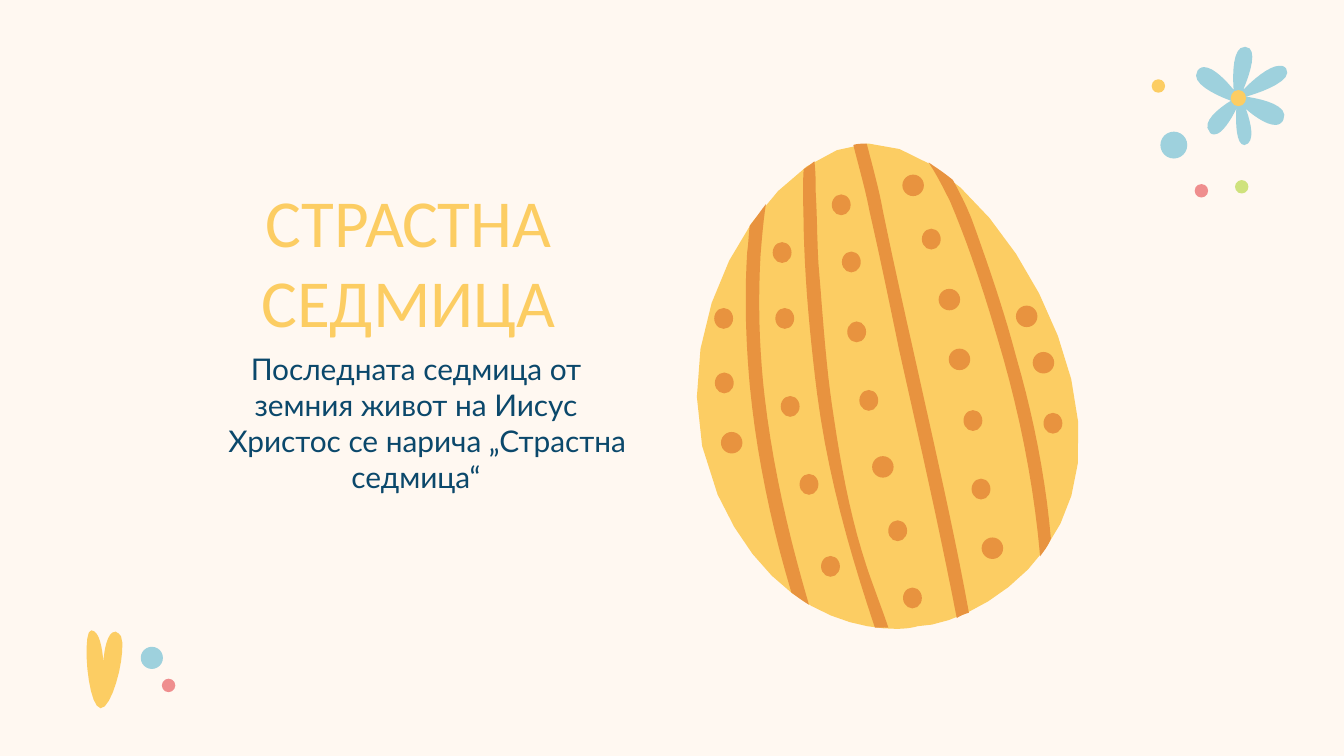
from dataclasses import dataclass

from pptx import Presentation
from pptx.dml.color import RGBColor
from pptx.enum.shapes import MSO_SHAPE
from pptx.enum.text import MSO_ANCHOR, MSO_AUTO_SIZE, PP_ALIGN
from pptx.util import Pt


@dataclass(frozen=True)
class Theme:
    """Colours, fonts and type sizes of the deck."""
    cream: str = "FFF8F1"
    yellow: str = "FCCD63"
    orange: str = "E8933F"
    blue: str = "9ED1DD"
    pink: str = "EF8E8E"
    green: str = "CFE27D"
    navy: str = "0B486B"
    title_font: str = "Calibri"
    body_font: str = "Lato"
    title_size: int = 36
    body_size: int = 16


THEME = Theme()
GRID = 0.72
CURVE_STEPS = 10
INSET = 7.2

EGG = [(165, 0), (163, 0, 163, 0, 163, 0), (90, 3, 0, 142, 52, 261),
       (91, 349, 155, 361, 185, 361), (195, 361, 201, 359, 201, 359),
       (231, 359, 311, 322, 320, 238), (331, 139, 238, 0, 165, 0)]
STRIPES = [
    [(88, 45), (84, 50, 80, 56, 76, 61), (75, 68, 75, 75, 74, 81),
     (72, 114, 73, 147, 76, 180), (81, 232, 92, 284, 107, 334),
     (111, 337, 115, 340, 120, 343), (105, 292, 93, 240, 87, 188),
     (83, 153, 82, 118, 84, 83), (85, 70, 86, 58, 88, 45)],
    [(124, 13), (122, 15, 119, 17, 116, 19), (115, 34, 116, 49, 116, 63),
     (117, 105, 121, 146, 126, 186), (134, 247, 150, 303, 169, 360),
     (173, 360, 176, 360, 179, 360), (174, 345, 168, 330, 163, 315),
     (150, 276, 143, 235, 137, 194), (132, 159, 130, 124, 127, 89),
     (126, 71, 126, 54, 125, 36), (125, 30, 125, 22, 124, 13)],
    [(209, 14), (215, 23, 220, 33, 225, 43), (239, 76, 250, 110, 260, 144),
     (276, 197, 287, 251, 292, 307), (295, 303, 298, 299, 300, 294),
     (296, 248, 287, 203, 274, 158), (265, 124, 253, 89, 241, 56),
     (237, 46, 232, 36, 227, 27), (221, 22, 215, 18, 209, 14)],
    [(163, 0), (159, 0, 156, 0, 153, 1), (157, 17, 162, 34, 165, 50),
     (173, 85, 180, 119, 187, 153), (202, 220, 217, 286, 230, 353),
     (233, 351, 236, 350, 239, 349), (228, 288, 214, 228, 201, 169),
     (192, 129, 183, 89, 175, 50), (172, 33, 167, 16, 163, 0)],
]
SMALL_SPOTS = [(211, 71), (242, 206), (248, 257), (301.5, 208),
               (144, 45.5), (151.5, 88), (155.5, 140), (164.5, 191),
               (186, 288), (197, 338), (100, 81), (102, 130), (106, 195.5),
               (120, 253.5), (136, 314.5), (57, 178), (56.5, 130)]
LARGE_SPOTS = [(197.5, 31), (224.5, 116), (232, 160.5), (282, 128.5),
               (294.5, 163), (175, 240.5), (256.5, 301), (62.5, 222.5)]
PETALS = [(42, 0), (31, 0, 34, 32, 34, 32), (34, 32, 21, 15, 12, 15),
          (10, 15, 8, 16, 7, 18), (0, 29, 32, 40, 32, 40),
          (32, 40, 8, 54, 16, 63), (17, 65, 18, 65, 20, 65),
          (27, 65, 36, 46, 36, 46), (36, 46, 34, 73, 42, 73),
          (53, 71, 43, 46, 43, 46), (43, 46, 56, 58, 65, 58),
          (67, 58, 70, 57, 71, 54), (77, 41, 43, 37, 43, 37),
          (43, 37, 80, 27, 73, 16), (71, 14, 70, 14, 68, 14),
          (58, 14, 41, 32, 41, 32), (41, 32, 55, 1, 43, 0)]
LEAVES = [(7, 0), (0, 0, 4, 57, 14, 58), (24, 58, 36, 5, 27, 2),
          (26, 2, 26, 1, 25, 1), (17, 1, 16, 24, 16, 24),
          (16, 24, 15, 0, 7, 0)]


def paint(shape, color):
    """Give a shape a flat fill with no line or shadow."""
    shape.shadow.inherit = False
    shape.fill.solid()
    shape.fill.fore_color.rgb = RGBColor.from_string(color)
    shape.line.fill.background()


def add_outline(shapes, box, outline, color):
    """Draw a closed outline of cubic curves from the corner of the box."""
    def place(x, y):
        return Pt(box[0] + x * GRID), Pt(box[1] + y * GRID)

    start, *curves = outline
    corner, points = start, []
    for x1, y1, x2, y2, x3, y3 in curves:
        for step in range(1, CURVE_STEPS + 1):
            t = step / CURVE_STEPS
            weights = ((1 - t) ** 3, 3 * t * (1 - t) ** 2, 3 * t * t * (1 - t), t ** 3)
            xs, ys = (corner[0], x1, x2, x3), (corner[1], y1, y2, y3)
            points.append(place(sum(w * x for w, x in zip(weights, xs)),
                                sum(w * y for w, y in zip(weights, ys))))
        corner = x3, y3
    builder = shapes.build_freeform(*place(*start), scale=1.0)
    builder.add_line_segments(points, close=True)
    paint(builder.convert_to_shape(), color)


def add_dot(shapes, box, center, size, color):
    """Draw an oval around a centre within the box."""
    width, height = size
    dot = shapes.add_shape(
        MSO_SHAPE.OVAL, Pt(box[0] + (center[0] - width / 2) * GRID),
        Pt(box[1] + (center[1] - height / 2) * GRID), Pt(width * GRID), Pt(height * GRID))
    paint(dot, color)


def write_text(shape, box, paragraphs, *, font, size, color, anchor, indents=()):
    """Place a text shape in its box and write centred paragraphs."""
    shape.left, shape.top, shape.width, shape.height = map(Pt, box)
    frame = shape.text_frame
    frame.word_wrap = True
    frame.auto_size = MSO_AUTO_SIZE.NONE
    frame.vertical_anchor = anchor
    frame.margin_left = frame.margin_right = Pt(INSET)
    frame.margin_top = frame.margin_bottom = Pt(INSET)
    frame.text = "\n".join(paragraphs)
    for paragraph in frame.paragraphs:
        paragraph.alignment = PP_ALIGN.CENTER
        paragraph.font.name = font
        paragraph.font.size = Pt(size)
        paragraph.font.color.rgb = RGBColor.from_string(color)
    for paragraph, indent in zip(frame.paragraphs, indents):
        paragraph._p.get_or_add_pPr().set("indent", str(Pt(indent)))


def add_flower_corner(slide, box):
    """Draw the flower with its scattered dots."""
    flower = slide.shapes.add_group_shape().shapes
    add_outline(flower, (box[0] + 27 * GRID, box[1]), PETALS, THEME.blue)
    add_dot(flower, box, (64.5, 38), (11.5, 12), THEME.yellow)
    for center, diameter, color in [((16.5, 73), 20, THEME.blue), ((37, 107), 10, THEME.pink),
                                    ((67, 104), 10, THEME.green), ((5, 29), 10, THEME.yellow)]:
        add_dot(slide.shapes, box, center, (diameter, diameter), color)


def add_leaf_corner(slide, box):
    """Draw the pair of leaves with two dots."""
    add_outline(slide.shapes, box, LEAVES, THEME.yellow)
    add_dot(slide.shapes, box, (52, 20.5), (16.5, 16.5), THEME.blue)
    add_dot(slide.shapes, box, (64.5, 41), (10, 10), THEME.pink)


def add_egg(slide, box):
    """Draw the striped and spotted egg as one group."""
    egg = slide.shapes.add_group_shape().shapes
    add_outline(egg, box, EGG, THEME.yellow)
    for stripe in STRIPES:
        add_outline(egg, box, stripe, THEME.orange)
    for spots, size in ((SMALL_SPOTS, (14, 15.5)), (LARGE_SPOTS, (16, 16))):
        for center in spots:
            add_dot(egg, box, center, size, THEME.orange)


def add_heading(slide, box):
    """Write the title and the sentence below it."""
    left, top = box
    write_text(slide.shapes.title, (left + 24.5, top, 190, 63.4), ["СТРАСТНА СЕДМИЦА"],
               font=THEME.title_font, size=THEME.title_size, color=THEME.yellow,
               anchor=MSO_ANCHOR.BOTTOM)
    sentence = slide.shapes.add_textbox(0, 0, 0, 0)
    write_text(sentence, (left, top + 54, 247, 126),
               ["Последната седмица от земния живот на Иисус",
                "Христос се нарича „Страстна седмица“"],
               font=THEME.body_font, size=THEME.body_size, color=THEME.navy,
               anchor=MSO_ANCHOR.TOP, indents=(0, 12))


def main():
    """Build the slide and save it."""
    deck = Presentation()
    deck.slide_width, deck.slide_height = Pt(720), Pt(405)
    slide = deck.slides.add_slide(deck.slide_layouts[5])
    slide.background.fill.solid()
    slide.background.fill.fore_color.rgb = RGBColor.from_string(THEME.cream)
    add_flower_corner(slide, (617, 25.2))
    add_leaf_corner(slide, (43.9, 337.7))
    add_egg(slide, (347, 77))
    add_heading(slide, (99.4, 126.7))
    deck.save("out.pptx")


if __name__ == "__main__":
    main()
